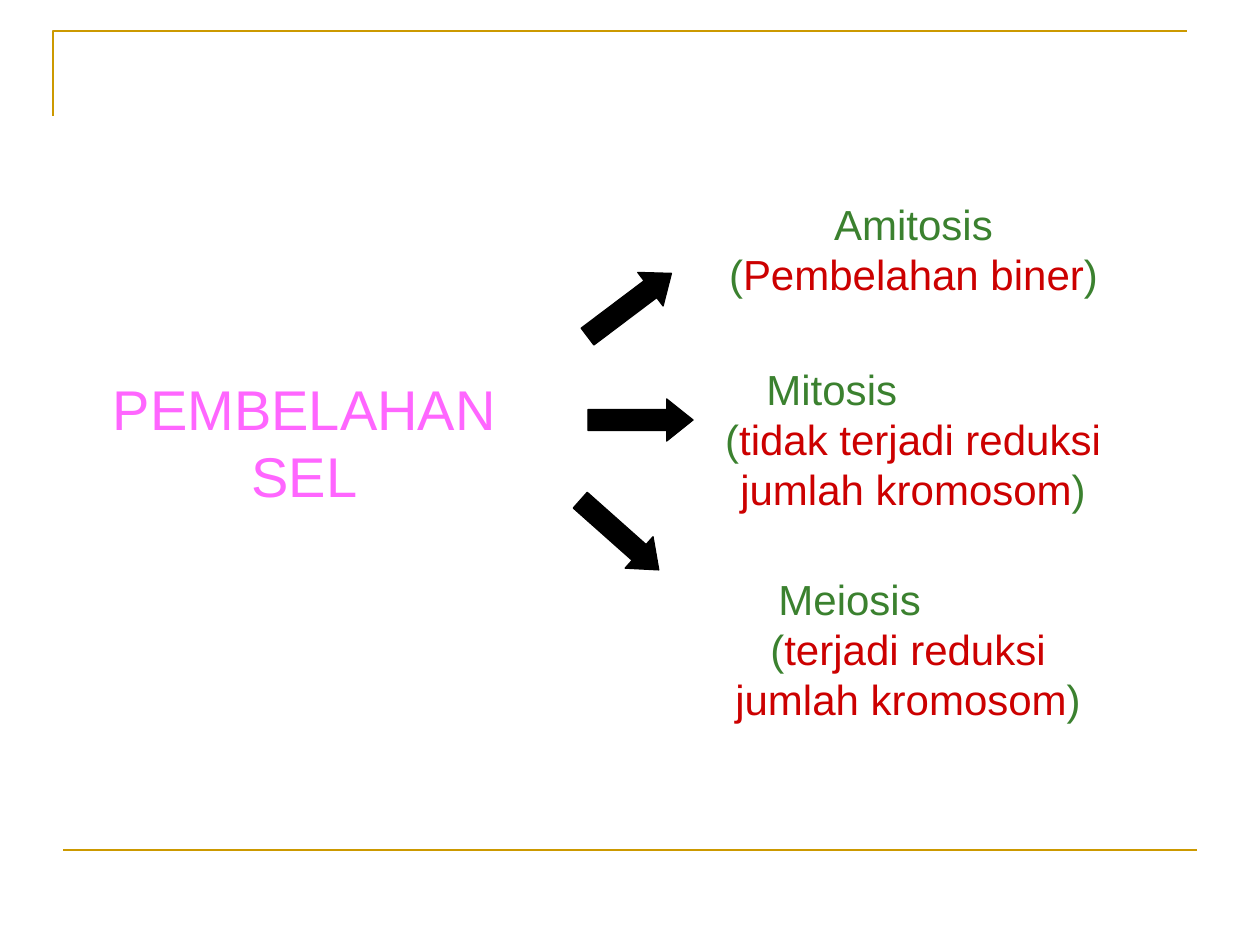
from pptx import Presentation
from pptx import util as u
from pptx.dml.color import RGBColor
from pptx.enum import shapes, text
from pptx.oxml import parse_xml
from pptx.oxml.ns import nsdecls

GOLD = RGBColor(0xCC, 0x99, 0x00)
PINK = RGBColor(0xFF, 0x66, 0xFF)
GREEN = RGBColor(0x3B, 0x81, 0x2F)
RED = RGBColor(0xCC, 0x00, 0x00)
BLACK = RGBColor(0, 0, 0)
SCALE = 914400 / 126


def px(*nums):
    return [u.Emu(round(n * SCALE)) for n in nums]


def write(para, words, size=24, color=GREEN, align=text.PP_ALIGN.CENTER):
    para.alignment = align
    run = para.add_run()
    run.text = words
    run.font.name = "Arial"
    run.font.size = u.Pt(size)
    run.font.color.rgb = color


deck = Presentation()
deck.slide_width, deck.slide_height = px(1260, 945)
slide = deck.slides.add_slide(deck.slide_layouts[5])
items = slide.shapes

pen = items.build_freeform(53, 116, scale=SCALE)
pen.add_line_segments([(53, 31), (1187, 31)], close=False)
frame = pen.convert_to_shape()
frame.shadow.inherit = False
frame.fill.background()
rule = items.add_connector(shapes.MSO_CONNECTOR.STRAIGHT, *px(63, 850, 1197, 850))
rule._element.spPr.append(parse_xml(f"<a:effectLst {nsdecls('a')}/>"))
for edge in (frame, rule):
    edge.line.color.rgb = GOLD
    edge.line.width = u.Pt(1.5)

title = items.title
title.left, title.top, title.width, title.height = px(63, 368, 483, 147)
title.text_frame.word_wrap = True
title.text_frame.auto_size = text.MSO_AUTO_SIZE.NONE
title.text_frame.vertical_anchor = text.MSO_ANCHOR.TOP
write(title.text_frame.paragraphs[0], "PEMBELAHAN SEL", size=32, color=PINK)

kinds = [
    ("Amitosis", "Pembelahan biner", (693, 192, 441, 113), 0),
    ("Mitosis", "tidak terjadi reduksi jumlah kromosom", (703, 357, 420, 164), 51),
    ("Meiosis", "terjadi reduksi jumlah kromosom", (703, 567, 410, 164), 63),
]
for name, note, area, inset in kinds:
    body = items.add_textbox(*px(*area)).text_frame
    body.word_wrap = True
    head = body.paragraphs[0]
    if inset:
        head._p.get_or_add_pPr().set("marL", str(px(inset)[0]))
        write(head, name, align=text.PP_ALIGN.LEFT)
    else:
        write(head, name)
    para = body.add_paragraph()
    for words, color in (("(", GREEN), (note, RED), (")", GREEN)):
        write(para, words, color=color)

for left, top, turn in ((588, 399, 0), (577, 284, 323), (567, 514, 41.6)):
    arrow = items.add_shape(shapes.MSO_SHAPE.RIGHT_ARROW, *px(left, top, 105, 42))
    arrow.adjustments[0] = 0.5
    arrow.adjustments[1] = 0.625
    arrow.rotation = turn
    arrow.shadow.inherit = False
    arrow.fill.solid()
    arrow.fill.fore_color.rgb = BLACK
    arrow.line.color.rgb = BLACK
    arrow.line.width = u.Pt(0.75)

deck.save("out.pptx")
